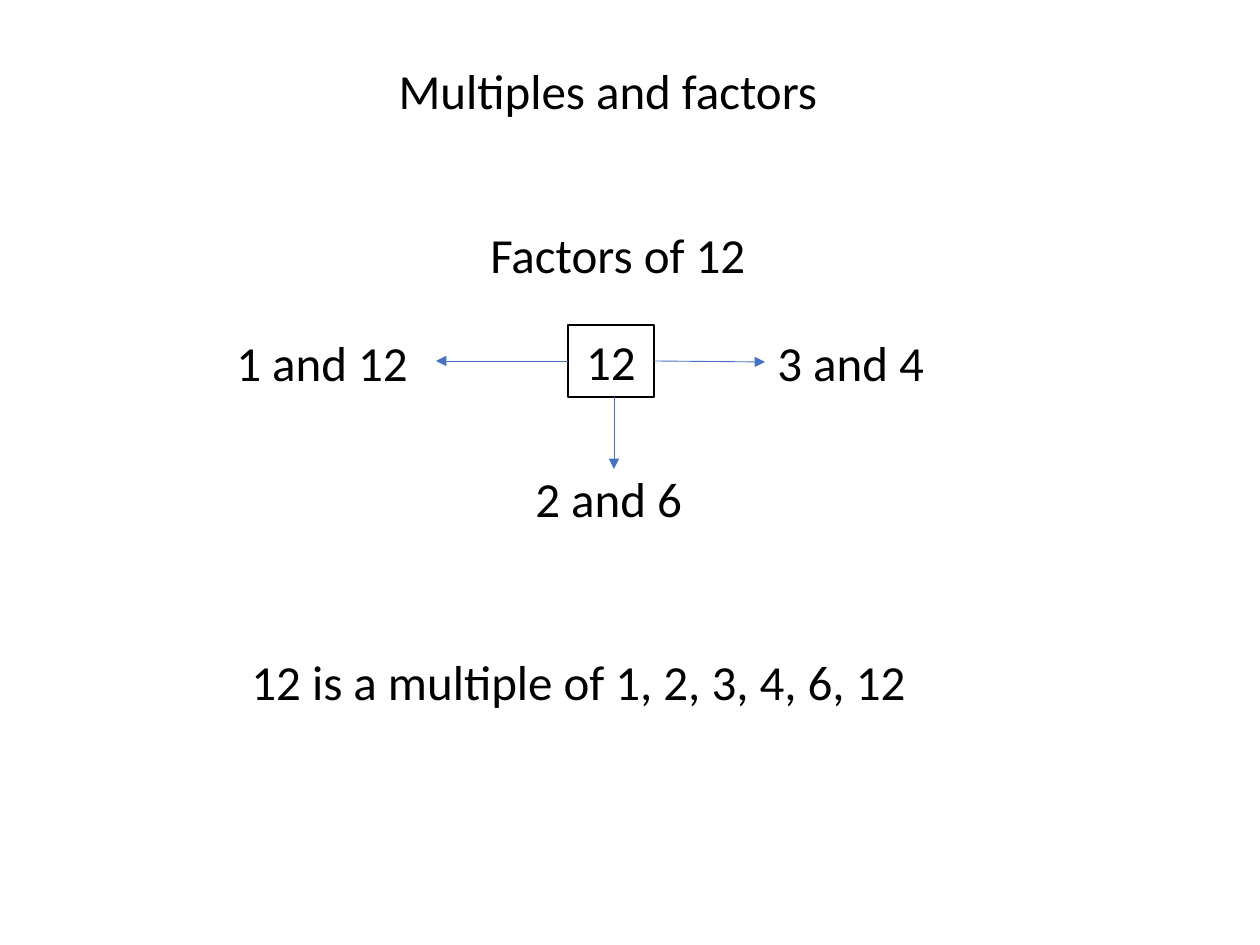
from pptx import Presentation
from pptx.dml.color import RGBColor
from pptx.enum.shapes import MSO_CONNECTOR as Connector, MSO_SHAPE as Shape
from pptx.enum.text import MSO_ANCHOR as Anchor, MSO_AUTO_SIZE as AutoSize, PP_ALIGN as Align
from pptx.oxml.ns import qn
from pptx.util import Pt
from lxml.etree import SubElement

PX = 914400 // 126


def color(value):
    return RGBColor.from_string(value)


def write(box, text, align=Align.LEFT):
    frame = box.text_frame
    frame.word_wrap = True
    frame.auto_size = AutoSize.SHAPE_TO_FIT_TEXT
    frame.vertical_anchor = Anchor.TOP
    para = frame.paragraphs[0]
    para.text = text
    para.alignment = align
    para.line_spacing = 1.0
    para.font.size = Pt(28)
    para.font.name = "Calibri"
    para.font.color.rgb = color("000000")


deck = Presentation()
deck.slide_width = 1260 * PX
deck.slide_height = 945 * PX
page = deck.slides.add_slide(deck.slide_layouts[5])

title = page.shapes.title
title.left, title.top, title.width, title.height = 386 * PX, 54 * PX, 538 * PX, 72 * PX
write(title, "Multiples and factors")

number = page.shapes.add_shape(Shape.RECTANGLE, 568 * PX, 325 * PX, 86 * PX, 72 * PX)
number.shadow.inherit = False
number.fill.background()
number.line.color.rgb = color("000000")
number.line.width = Pt(0.75)
write(number, "12", Align.CENTER)

labels = [
    ("Factors of 12", 478, 218, 305),
    ("1 and 12", 224, 326, 204),
    ("2 and 6", 523, 462, 212),
    ("3 and 4", 765, 326, 212),
    ("12 is a multiple of 1, 2, 3, 4, 6, 12", 239, 645, 853),
]
for text, left, top, width in labels:
    label = page.shapes.add_textbox(left * PX, top * PX, width * PX, 72 * PX)
    write(label, text)

arrows = [
    (568, 361, 436, 361, 1),
    (614, 397, 614, 469, None),
    (654, 361, 765, 362, 3),
]
for x1, y1, x2, y2, side in arrows:
    arrow = page.shapes.add_connector(Connector.STRAIGHT, x1 * PX, y1 * PX, x2 * PX, y2 * PX)
    if side is not None:
        arrow.begin_connect(number, side)
    arrow.line.color.rgb = color("4472C4")
    arrow.line.width = Pt(0.5)
    SubElement(arrow.line._get_or_add_ln(), qn("a:tailEnd"), type="triangle")
    SubElement(arrow._element.spPr, qn("a:effectLst"))

deck.save("out.pptx")
